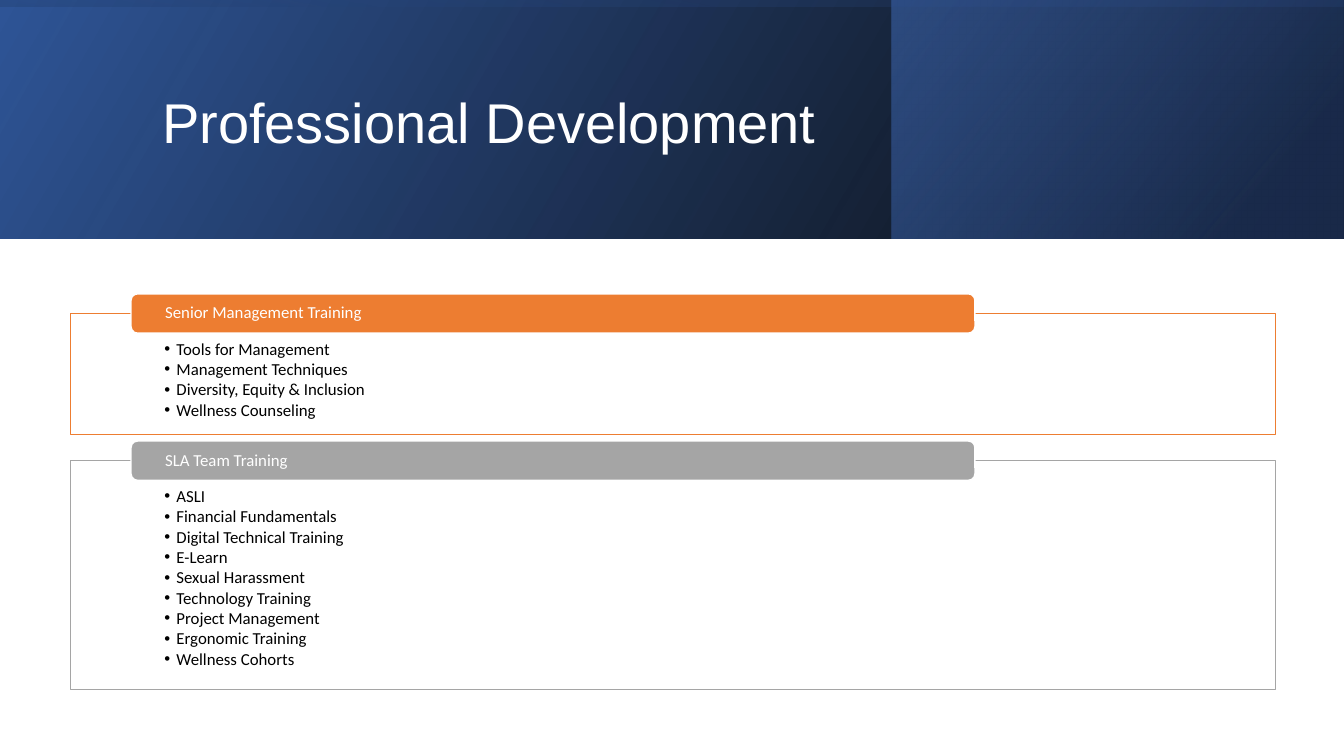
from lxml.etree import SubElement
from pptx import Presentation
from pptx.dml.color import RGBColor
from pptx.enum.shapes import MSO_SHAPE
from pptx.enum.text import MSO_ANCHOR
from pptx.oxml import parse_xml
from pptx.oxml.ns import nsdecls, qn
from pptx.util import Inches, Pt

COLORS = {
    "white": "FFFFFF", "black": "000000", "orange": "ED7D31", "gray": "A5A5A5",
    "blue": "2F5597", "navy": "203864", "sky": "4472C4",
}
TITLE = {"name": "Arial", "size": Pt(40)}
BODY = {"name": "Calibri", "size": Pt(12)}
BANDS = [
    ((0, 0, 13.33, 2.37), 0, 330, [(0, "black", 96), (100, "blue", 100)]),
    ((8.84, 0, 4.48, 2.37), 0, 320, [(19, "navy", 68), (100, "sky", 48)]),
    ((5.48, -5.48, 2.37, 13.33), 270, 350, [(23, "blue", 16), (99, "black", 45)]),
]
SECTIONS = [
    ("Senior Management Training", "orange", 1.2, [
        "Tools for Management", "Management Techniques",
        "Diversity, Equity & Inclusion", "Wellness Counseling"]),
    ("SLA Team Training", "gray", 2.27, [
        "ASLI", "Financial Fundamentals", "Digital Technical Training",
        "E-Learn", "Sexual Harassment", "Technology Training",
        "Project Management", "Ergonomic Training", "Wellness Cohorts"]),
]
LEFT, TOP, WIDTH, GAP = 0.7, 3.11, 11.95, 0.26
TAB_H = 0.39


class Deck:
    """Hold the style and the current slide, and draw each kind of element."""

    def __init__(self):
        self.prs = Presentation()
        self.prs.slide_width, self.prs.slide_height = Inches(13.33), Inches(7.5)
        self.s = self.prs.slides.add_slide(self.prs.slide_layouts[6])

    def color(self, name):
        return RGBColor.from_string(COLORS[name])

    def shape(self, kind, at):
        sp = self.s.shapes.add_shape(kind, *map(Inches, at))
        sp.shadow.inherit = False
        return sp

    def band(self, at, rotation, angle, stops):
        sp = self.shape(MSO_SHAPE.RECTANGLE, at)
        sp.line.fill.background()
        sp.rotation = rotation
        spPr = sp._element.spPr
        spPr.find(qn("a:xfrm")).set("flipH", "1")
        gs = "".join(
            f'<a:gs pos="{pos * 1000}"><a:srgbClr val="{COLORS[c]}">'
            f'<a:alpha val="{alpha * 1000}"/></a:srgbClr></a:gs>'
            for pos, c, alpha in stops)
        grad = parse_xml(
            f'<a:gradFill {nsdecls("a")} rotWithShape="1"><a:gsLst>{gs}</a:gsLst>'
            f'<a:lin ang="{angle * 60000}" scaled="0"/></a:gradFill>')
        spPr.find(qn("a:prstGeom")).addnext(grad)

    def panel(self, kind, at, fill, line, alpha=100):
        sp = self.shape(kind, at)
        sp.fill.solid()
        sp.fill.fore_color.rgb = self.color(fill)
        if alpha < 100:
            clr = sp._element.spPr.find(qn("a:solidFill"))[0]
            SubElement(clr, qn("a:alpha"), val=str(alpha * 1000))
        sp.line.color.rgb = self.color(line)
        sp.line.width = Pt(1)
        return sp

    def text(self, sp, lines, style, color, insets, anchor, after=0, bullet=False):
        tf = sp.text_frame
        left, top, right, bottom = map(Inches, insets)
        frame = {"word_wrap": True, "vertical_anchor": anchor,
                 "margin_left": left, "margin_top": top,
                 "margin_right": right, "margin_bottom": bottom}
        for key, value in frame.items():
            setattr(tf, key, value)
        for i, line in enumerate(lines):
            p = tf.add_paragraph() if i else tf.paragraphs[0]
            p.alignment = 1
            p.line_spacing = 0.9
            p.space_after = Pt(after)
            if bullet:
                pPr = p._p.get_or_add_pPr()
                pPr.set("marL", str(Inches(0.12)))
                pPr.set("indent", str(-Inches(0.12)))
                SubElement(pPr, qn("a:buFont"), typeface="Arial")
                SubElement(pPr, qn("a:buChar"), char="•")
            r = p.add_run()
            r.text = line
            for key, value in style.items():
                setattr(r.font, key, value)
            r.font.color.rgb = self.color(color)

    def title(self, text, at):
        sp = self.s.shapes.add_textbox(*map(Inches, at))
        self.text(sp, [text], TITLE, "white", (0.1, 0.05, 0.1, 0.05), MSO_ANCHOR.MIDDLE)

    def section(self, name, color, top, height, items):
        box = self.panel(MSO_SHAPE.RECTANGLE, (LEFT, top, WIDTH, height),
                         "white", color, 90)
        self.text(box, items, BODY, "black", (0.93, 0.27, 0.93, 0.09),
                  MSO_ANCHOR.TOP, 1.6, True)
        tab = self.panel(MSO_SHAPE.ROUNDED_RECTANGLE,
                         (LEFT + 0.6, top - TAB_H / 2, 8.37, TAB_H), color, "white")
        self.text(tab, [name], BODY, "white", (0.32, 0, 0.32, 0), MSO_ANCHOR.MIDDLE)


def main():
    deck = Deck()
    for band in BANDS:
        deck.band(*band)
    deck.title("Professional Development", (1.51, 0.38, 10.63, 1.72))
    top = TOP
    for name, color, height, items in SECTIONS:
        deck.section(name, color, top, height, items)
        top += height + GAP
    deck.prs.save("out.pptx")


if __name__ == "__main__":
    main()
